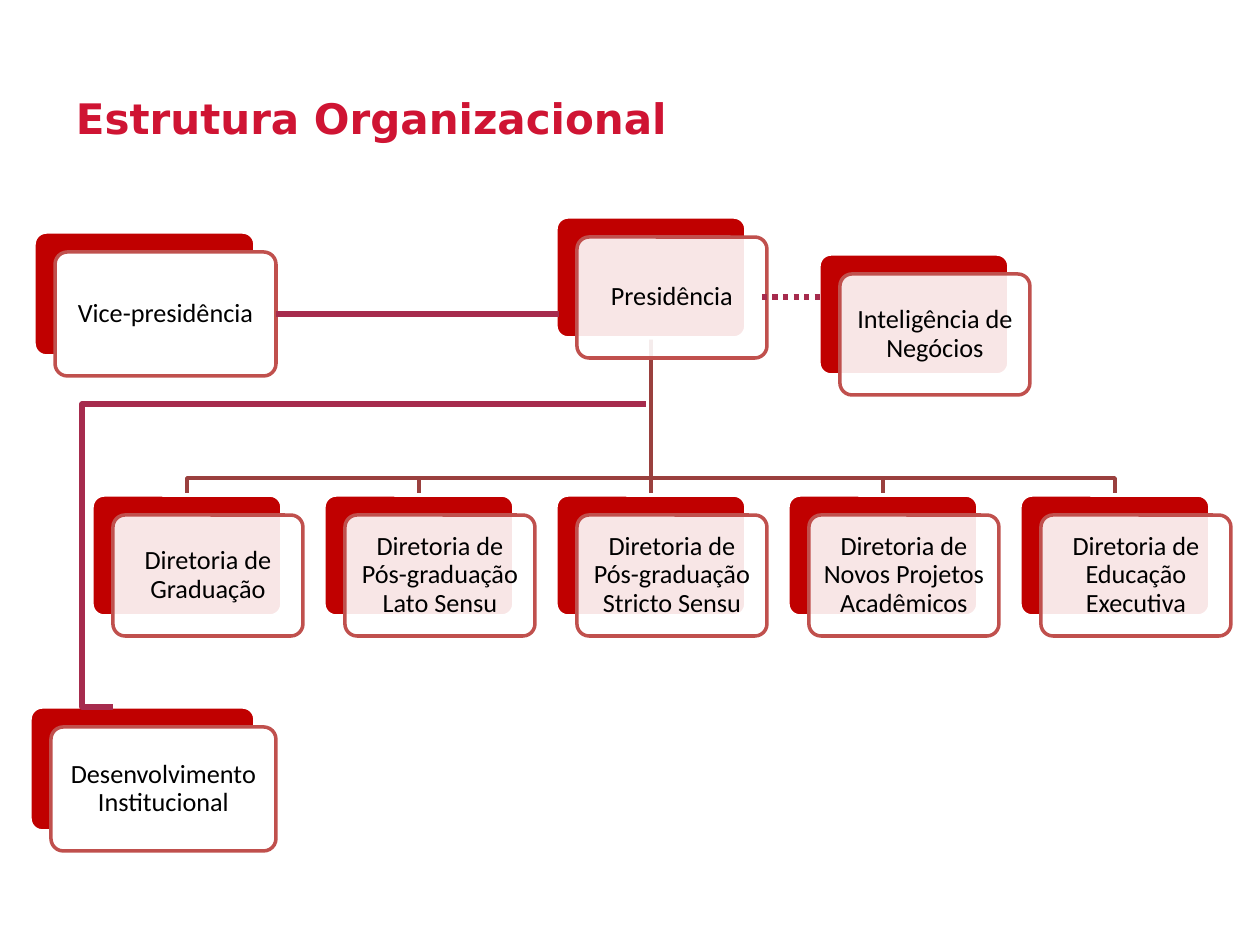
from lxml.etree import SubElement
from pptx import Presentation
from pptx.dml.color import RGBColor
from pptx.enum.dml import MSO_LINE
from pptx.enum.shapes import MSO_CONNECTOR, MSO_SHAPE
from pptx.enum.text import MSO_ANCHOR, PP_ALIGN
from pptx.oxml.ns import qn
from pptx.util import Pt

SCALE = 914400 / 126
RED = RGBColor(0xC0, 0x00, 0x00)
EDGE = RGBColor(0xC0, 0x50, 0x4D)
BROWN = RGBColor(0x9A, 0x40, 0x3E)
WINE = RGBColor(0xA6, 0x2B, 0x4D)
CRIMSON = RGBColor(0xCF, 0x14, 0x33)
WHITE = RGBColor(0xFF, 0xFF, 0xFF)
BLACK = RGBColor(0x00, 0x00, 0x00)

UNITS = [
    "Diretoria de Graduação",
    "Diretoria de Pós-graduação Lato Sensu",
    "Diretoria de Pós-graduação Stricto Sensu",
    "Diretoria de Novos Projetos Acadêmicos",
    "Diretoria de Educação Executiva",
]
WIDE, HIGH = 190, 121
LEFT, STEP = 92, 232
ROW, BUS, STEM = 495, 478, 336
TRUNK = LEFT + 2 * STEP + WIDE // 2


def px(num):
    return round(num * SCALE)


def write(shape, text, size=15, font="Calibri", color=BLACK, bold=False,
          align=PP_ALIGN.CENTER, anchor=MSO_ANCHOR.MIDDLE, inset=(8, 8), space=0.9):
    frame = shape.text_frame
    frame.word_wrap = True
    frame.vertical_anchor = anchor
    frame.margin_left = frame.margin_right = px(inset[0])
    frame.margin_top = frame.margin_bottom = px(inset[1])
    para = frame.paragraphs[0]
    para.alignment = align
    para.line_spacing = space
    run = para.add_run()
    run.text = text
    run.font.size = Pt(size)
    run.font.name = font
    run.font.bold = bold
    run.font.color.rgb = color


def panel(slide, x, y, wide, high, fill, edge, alpha=100):
    shape = slide.shapes.add_shape(
        MSO_SHAPE.ROUNDED_RECTANGLE, px(x), px(y), px(wide), px(high))
    shape.adjustments[0] = 0.1
    shape.shadow.inherit = False
    shape.fill.solid()
    shape.fill.fore_color.rgb = fill
    shape.line.color.rgb = edge
    shape.line.width = Pt(2)
    if alpha < 100:
        tint = shape.fill._xPr.find(qn("a:solidFill"))[0]
        SubElement(tint, qn("a:alpha"), val=str(alpha * 1000))
    return shape


def card(slide, text, x, y, wide=WIDE, high=HIGH, alpha=90):
    panel(slide, x, y, wide, high, RED, WHITE)
    front = panel(slide, x + 21, y + 20, wide, high, WHITE, EDGE, alpha)
    write(front, text)


def link(slide, start, end, color=WINE, width=3, kind=MSO_CONNECTOR.STRAIGHT):
    line = slide.shapes.add_connector(kind, *map(px, start + end))
    line.line.color.rgb = color
    line.line.width = Pt(width)
    SubElement(line._element.spPr, qn("a:effectLst"))
    return line


def branch(slide, x):
    pen = slide.shapes.build_freeform(TRUNK, STEM, scale=SCALE)
    pen.add_line_segments([(TRUNK, BUS), (x, BUS), (x, ROW)], close=False)
    shape = pen.convert_to_shape()
    shape.shadow.inherit = False
    shape.fill.background()
    shape.line.color.rgb = BROWN
    shape.line.width = Pt(2)


def elbow(slide, start, end, turn):
    line = link(slide, start, end, kind=MSO_CONNECTOR.ELBOW)
    ratio = (turn - start[0]) / (end[0] - start[0])
    geom = line._element.spPr.find(qn("a:prstGeom"))
    guides = geom.find(qn("a:avLst"))
    if guides is None:
        guides = SubElement(geom, qn("a:avLst"))
    SubElement(guides, qn("a:gd"), name="adj1", fmla=f"val {round(ratio * 100000)}")


def main():
    deck = Presentation()
    deck.slide_width, deck.slide_height = px(1260), px(945)
    slide = deck.slides.add_slide(deck.slide_layouts[6])

    title = slide.shapes.add_textbox(px(63), px(87), px(1134), px(86))
    write(title, "Estrutura Organizacional", size=24, font="DejaVu Sans",
          color=CRIMSON, bold=True, align=PP_ALIGN.LEFT,
          anchor=MSO_ANCHOR.TOP, inset=(13, 6), space=1.0)

    spots = [LEFT + STEP * i for i in range(len(UNITS))]
    for x in spots:
        mid = x + WIDE // 2
        if mid == TRUNK:
            link(slide, (TRUNK, STEM), (TRUNK, ROW), BROWN, 2)
        else:
            branch(slide, mid)

    card(slide, "Presidência", spots[2], 217)
    for text, x in zip(UNITS, spots):
        card(slide, text, x, ROW)
    card(slide, "Inteligência de Negócios", 819, 254)
    card(slide, "Vice-presidência", 34, 232, 221, 124, alpha=100)
    card(slide, "Desenvolvimento Institucional", 30, 707, 225, 124, alpha=100)

    link(slide, (276, 314), (559, 314))
    dots = link(slide, (762, 297), (820, 297))
    dots.line.dash_style = MSO_LINE.ROUND_DOT
    elbow(slide, (113, 707), (646, 404), 82)
    deck.save("out.pptx")


if __name__ == "__main__":
    main()
